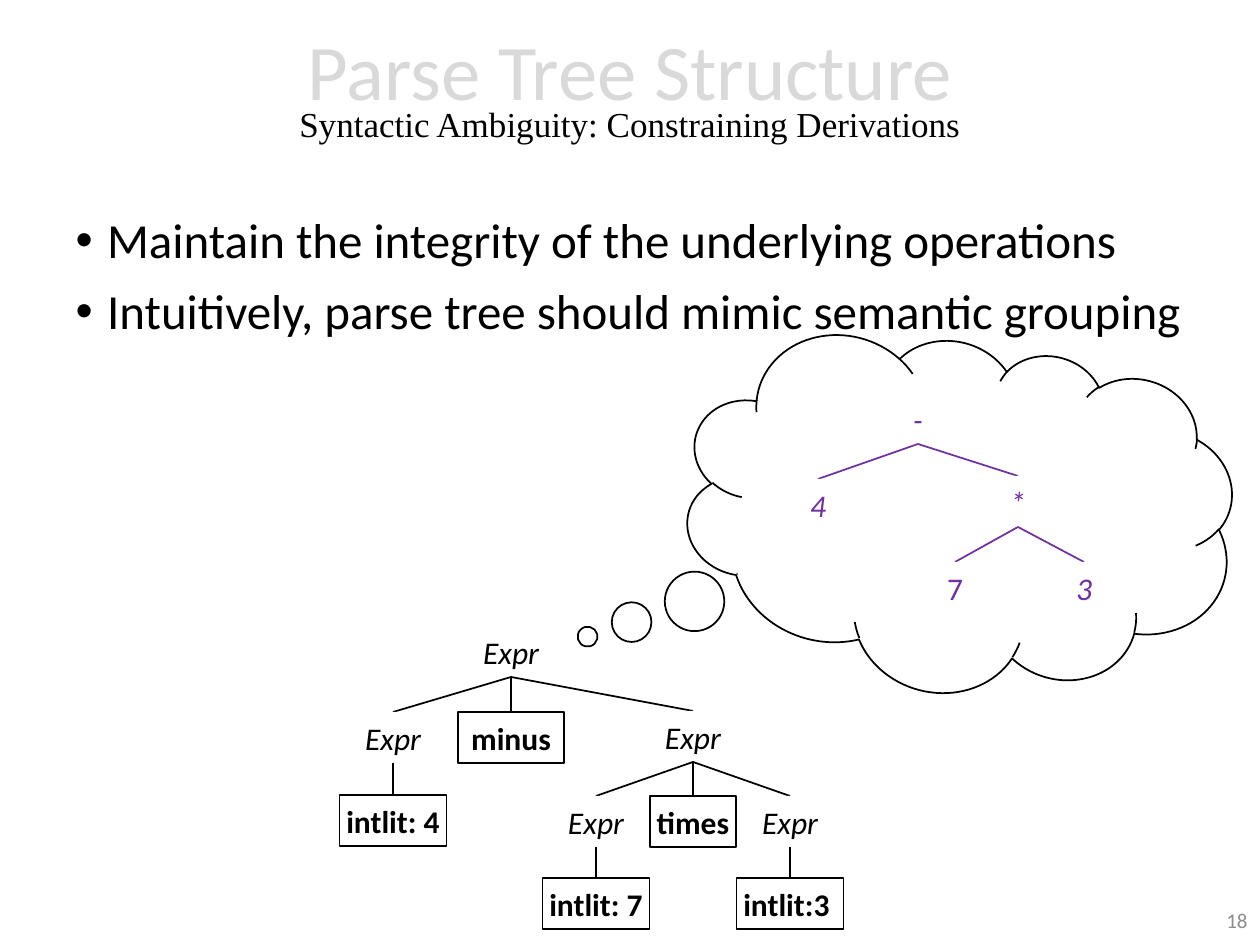
from pptx import Presentation
from pptx.dml.color import RGBColor
from pptx.enum.shapes import MSO_CONNECTOR, MSO_SHAPE
from pptx.enum.text import MSO_ANCHOR, MSO_AUTO_SIZE, PP_ALIGN
from pptx.oxml.ns import qn
from pptx.util import Emu, Pt

SCALE = 914400 / 126
NODE_HEIGHT = 51
COLORS = {
    "white": "FFFFFF",
    "ink": "000000",
    "heading": "D9D9D9",
    "number": "8C8C8C",
    "meaning": "7030A0",
}
SYMBOL = {"size": Pt(18), "name": "Calibri", "italic": True}
DIGIT = {"size": Pt(18), "name": "Calibri"}
TOKEN = {"size": Pt(18), "name": "Calibri", "bold": True}

MEANING_TREE = ("-", SYMBOL, 918, 393, 35, [
    ("4", SYMBOL, 818, 479, 42, []),
    ("*", SYMBOL, 1018, 476, 42, [
        ("7", DIGIT, 955, 562, 42, []),
        ("3", SYMBOL, 1084, 562, 42, []),
    ]),
])
PARSE_TREE = ("Expr", SYMBOL, 511, 626, 83, [
    ("Expr", SYMBOL, 393, 712, 83, [("intlit: 4", TOKEN, 393, 795, 107, [])]),
    ("minus", TOKEN, 511, 712, 106, []),
    ("Expr", SYMBOL, 693, 711, 83, [
        ("Expr", SYMBOL, 596, 796, 83, [("intlit: 7", TOKEN, 596, 878, 107, [])]),
        ("times", TOKEN, 693, 796, 86, []),
        ("Expr", SYMBOL, 790, 796, 83, [("intlit:3 ", TOKEN, 790, 878, 107, [])]),
    ]),
])


def px(length):
    return Emu(round(length * SCALE))


def color(key):
    return RGBColor.from_string(COLORS[key])


def apply_format(target, values):
    for attribute, value in values.items():
        setattr(target, attribute, value)


def place(element, left, top, width, height):
    apply_format(element, {
        "left": px(left), "top": px(top), "width": px(width), "height": px(height),
    })


def write(paragraph, text, font, ink, layout):
    run = paragraph.add_run()
    run.text = text
    apply_format(run.font, font)
    run.font.color.rgb = color(ink)
    apply_format(paragraph, layout)


def add_outline(shapes, preset, box, line=None, rotation=0):
    outline = shapes.add_shape(preset, *map(px, box))
    outline.rotation = rotation
    outline.shadow.inherit = False
    outline.fill.solid()
    outline.fill.fore_color.rgb = color("white")
    if line:
        outline.line.color.rgb = color(line)
        outline.line.width = Pt(1)
    else:
        outline.line.fill.background()
    return outline


def add_branch(shapes, start, end, ink):
    branch = shapes.add_connector(MSO_CONNECTOR.STRAIGHT, *map(px, start + end))
    branch.line.color.rgb = color(ink)
    branch.line.width = Pt(1)
    properties = branch._element.spPr
    properties.append(properties.makeelement(qn("a:effectLst"), {}))


def add_node(shapes, text, font, center, top, width, ink):
    border = ink if font is TOKEN else None
    box = (center - width / 2, top, width, NODE_HEIGHT)
    node = add_outline(shapes, MSO_SHAPE.RECTANGLE, box, border)
    apply_format(node.text_frame, {
        "word_wrap": False, "vertical_anchor": MSO_ANCHOR.MIDDLE,
        "margin_left": px(6), "margin_right": px(6),
        "margin_top": px(6), "margin_bottom": px(6),
    })
    write(node.text_frame.paragraphs[0], text, font, ink, {"alignment": PP_ALIGN.CENTER})


def add_tree(shapes, tree, ink):
    text, font, center, top, width, children = tree
    add_node(shapes, text, font, center, top, width, ink)
    for child in children:
        add_branch(shapes, (center, top + NODE_HEIGHT), (child[2], child[3]), ink)
        add_tree(shapes, child, ink)


def add_thought_cloud(shapes):
    cloud = add_outline(shapes, MSO_SHAPE.CLOUD_CALLOUT, (685, 336, 547, 357), "ink", 14.6)
    cloud.adjustments[0] = -0.6
    cloud.adjustments[1] = 0.593
    add_outline(shapes, MSO_SHAPE.RECTANGLE, (743, 476, 73, 113), "white", 237.2)
    add_outline(shapes, MSO_SHAPE.RECTANGLE, (1076, 499, 73, 113), "white")


def fill_title(title):
    place(title, 87, 4, 1086, 183)
    frame = title.text_frame
    apply_format(frame, {
        "auto_size": MSO_AUTO_SIZE.NONE, "vertical_anchor": MSO_ANCHOR.MIDDLE,
    })
    layout = {"alignment": PP_ALIGN.CENTER, "line_spacing": 0.7, "space_before": Pt(0)}
    write(frame.paragraphs[0], "Parse Tree Structure",
          {"size": Pt(45), "name": "Calibri"}, "heading", layout)
    write(frame.add_paragraph(), "Syntactic Ambiguity: Constraining Derivations",
          {"size": Pt(20), "name": "Times New Roman"}, "ink", layout)


def fill_points(body):
    place(body, 63, 210, 1134, 725)
    frame = body.text_frame
    frame.auto_size = MSO_AUTO_SIZE.NONE
    points = (
        "Maintain the integrity of the underlying operations",
        "Intuitively, parse tree should mimic semantic grouping",
    )
    for index, point in enumerate(points):
        paragraph = frame.add_paragraph() if index else frame.paragraphs[0]
        write(paragraph, point, {"size": Pt(28), "name": "Calibri"}, "ink",
              {"line_spacing": 0.9, "space_before": Pt(10)})
        properties = paragraph._p.get_or_add_pPr()
        properties.set("marL", str(Pt(18)))
        properties.set("indent", str(-Pt(18)))


def add_slide_number(shapes):
    number = shapes.add_textbox(*map(px, (977, 895, 283, 50)))
    apply_format(number.text_frame, {
        "word_wrap": True, "vertical_anchor": MSO_ANCHOR.MIDDLE,
    })
    write(number.text_frame.paragraphs[0], "18", {"size": Pt(12), "name": "Calibri"},
          "number", {"alignment": PP_ALIGN.RIGHT})


def main():
    deck = Presentation()
    apply_format(deck, {"slide_width": px(1260), "slide_height": px(945)})
    slide = deck.slides.add_slide(deck.slide_layouts[1])
    title, body = slide.placeholders
    fill_title(title)
    fill_points(body)
    add_thought_cloud(slide.shapes.add_group_shape().shapes)
    for front in (body, title):
        slide.shapes._spTree.append(front._element)
    add_slide_number(slide.shapes)
    add_tree(slide.shapes.add_group_shape().shapes, PARSE_TREE, "ink")
    add_tree(slide.shapes.add_group_shape().shapes, MEANING_TREE, "meaning")
    deck.save("out.pptx")


if __name__ == "__main__":
    main()
